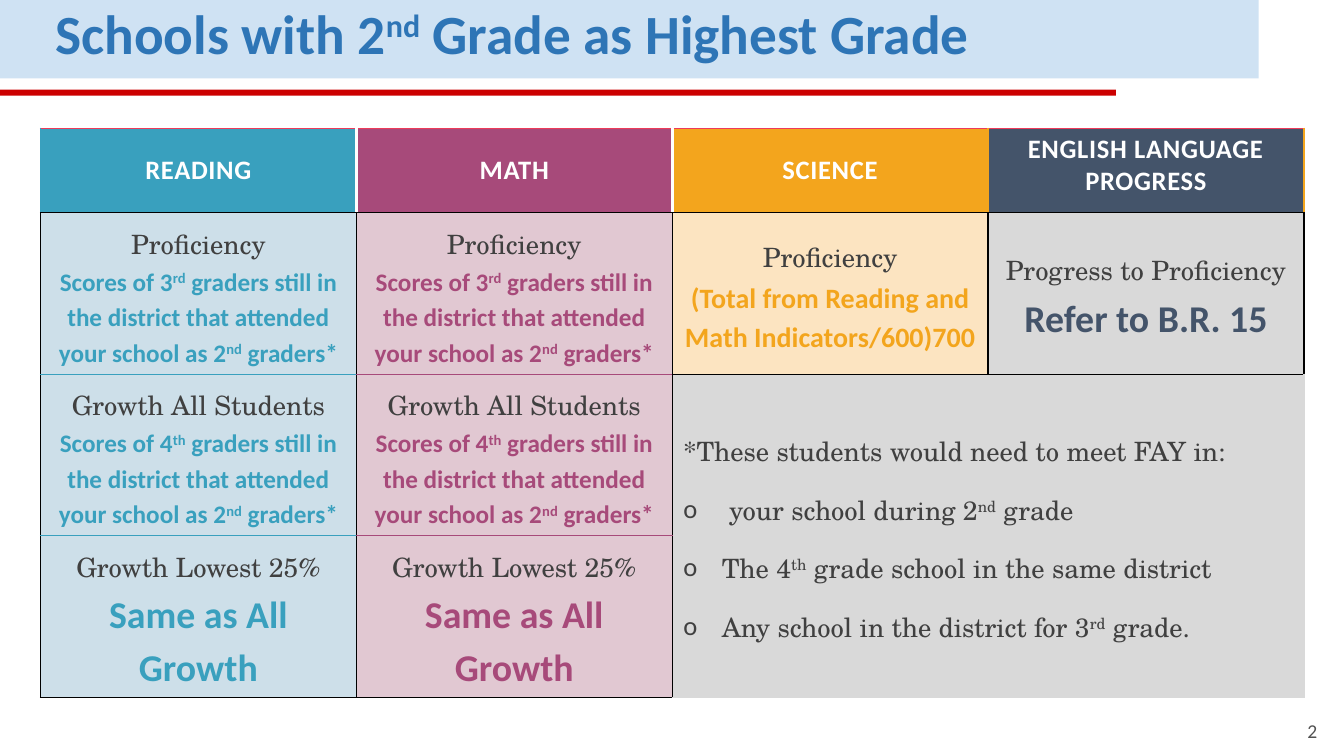
from dataclasses import dataclass

import pptx
import pptx.dml.color
import pptx.enum.shapes
import pptx.enum.text
import pptx.oxml
import pptx.oxml.ns
import pptx.util
from pptx.util import Cm

ANCHOR = pptx.enum.text.MSO_ANCHOR
ALIGN = pptx.enum.text.PP_ALIGN


@dataclass(frozen=True)
class Theme:
    sans: str = "Calibri"
    serif: str = "TeX Gyre Schola"
    title: str = "2E75B6"
    band: str = "CFE2F3"
    rule: str = "CC0000"
    page: str = "525252"
    text: str = "404040"
    white: str = "FFFFFF"
    black: str = "000000"
    header_top: str = "EE3A5A"
    reading: str = "39A0BE"
    math: str = "A74A7A"
    science: str = "F3A51D"
    english: str = "44546A"
    reading_tint: str = "CDDFE9"
    math_tint: str = "E1C8D2"
    science_tint: str = "FCE4C1"
    grey: str = "D9D9D9"
    title_size: float = 39.5
    label_size: float = 19
    scores_size: float = 18
    total_size: float = 20
    large_size: float = 27
    page_size: float = 14


THEME = Theme()


def rgb(value):
    return pptx.dml.color.RGBColor.from_string(value)


def add_text(paragraph, text, size, color, font=THEME.sans, bold=False, spacing=None):
    """Add runs; parts between ^ marks are raised."""
    for index, part in enumerate(text.split("^")):
        run = paragraph.add_run()
        run.text = part
        run.font.size = pptx.util.Pt(size)
        run.font.name = font
        run.font.bold = bold
        run.font.color.rgb = rgb(color)
        properties = run._r.get_or_add_rPr()
        if index % 2:
            properties.set("baseline", "30000")
        if spacing:
            properties.set("spc", str(spacing))


def add_label(paragraph, text):
    add_text(paragraph, text, THEME.label_size, THEME.text, THEME.serif)


def add_band(slide, top, width, height, color):
    band = slide.shapes.add_shape(
        pptx.enum.shapes.MSO_SHAPE.RECTANGLE, 0, top, width, height)
    band.shadow.inherit = False
    band.fill.solid()
    band.fill.fore_color.rgb = rgb(color)
    band.line.fill.background()
    slide.shapes._spTree.insert(2, band._element)  # behind the title


def add_title(slide, text):
    title = slide.shapes.title
    title.left, title.top, title.width, title.height = (
        Cm(1.14), Cm(0.13), Cm(30.58), Cm(1.68))
    frame = title.text_frame
    frame.auto_size = pptx.enum.text.MSO_AUTO_SIZE.NONE
    frame.vertical_anchor = ANCHOR.MIDDLE
    paragraph = frame.paragraphs[0]
    paragraph.alignment = ALIGN.LEFT
    paragraph.line_spacing = 0.8
    add_text(paragraph, text, THEME.title_size, THEME.title, bold=True)


def add_page_number(slide, text):
    frame = slide.shapes.add_textbox(Cm(31.42), Cm(18.11), Cm(2.03), Cm(0.86)).text_frame
    frame.word_wrap = True
    frame.vertical_anchor = ANCHOR.BOTTOM
    frame.margin_left = frame.margin_right = Cm(0.25)
    frame.margin_top = frame.margin_bottom = Cm(0.25)
    frame.paragraphs[0].alignment = ALIGN.RIGHT
    add_text(frame.paragraphs[0], text, THEME.page_size, THEME.page)


def format_cell(cell, fill, left=THEME.black, right=THEME.black, top=THEME.black,
                bottom=THEME.black):
    cell.fill.solid()
    cell.fill.fore_color.rgb = rgb(fill)
    cell.vertical_anchor = ANCHOR.MIDDLE
    cell.margin_left = cell.margin_right = Cm(0.28)
    cell.margin_top = cell.margin_bottom = Cm(0.13)
    borders = {"L": left, "R": right, "T": top, "B": bottom}
    for index, (side, color) in enumerate(borders.items()):
        width = pptx.util.Pt(2.25 if color == THEME.white else 1)
        cell._tc.get_or_add_tcPr().insert(index, pptx.oxml.parse_xml(
            f'<a:ln{side} {pptx.oxml.ns.nsdecls("a")} w="{width}"><a:solidFill>'
            f'<a:srgbClr val="{color}"/></a:solidFill></a:ln{side}>'))


def cell_paragraph(cell, first=True, align=ALIGN.CENTER, after=10):
    frame = cell.text_frame
    paragraph = frame.paragraphs[0] if first else frame.add_paragraph()
    paragraph.alignment = align
    paragraph.line_spacing = 1.15
    paragraph.space_after = pptx.util.Pt(after)
    return paragraph


def add_indicator(cell, label, detail, size, color):
    paragraph = cell_paragraph(cell)
    add_label(paragraph, label)
    paragraph.add_line_break()
    add_text(paragraph, detail, size, color, bold=True)


def add_bullet(paragraph):
    properties = paragraph._p.get_or_add_pPr()
    properties.set("marL", str(Cm(0.97)))
    properties.set("indent", str(-Cm(0.97)))
    for element in (f'buFont {{}} typeface="{THEME.sans}"', 'buChar {} char="o"'):
        properties.append(pptx.oxml.parse_xml(
            f'<a:{element.format(pptx.oxml.ns.nsdecls("a"))}/>'))


def fill_headers(table):
    t = THEME
    headers = [
        ("READING", t.reading, t.reading, t.white),
        ("MATH", t.math, t.white, t.white),
        ("SCIENCE", t.science, t.white, t.science),
        ("ENGLISH LANGUAGE PROGRESS", t.english, t.science, t.science),
    ]
    for column, (text, fill, left, right) in enumerate(headers):
        cell = table.cell(0, column)
        format_cell(cell, fill, left, right, top=t.header_top)
        paragraph = cell.text_frame.paragraphs[0]
        paragraph.alignment = ALIGN.CENTER
        add_text(paragraph, text, t.label_size, t.white, bold=True, spacing=50)
    table.cell(0, 3).vertical_anchor = ANCHOR.TOP


def fill_subjects(table):
    scores = "Scores of {} graders still in the district that attended your school as 2^nd^ graders*"
    indicators = [
        ("Proficiency", scores.format("3^rd^"), THEME.scores_size),
        ("Growth All Students", scores.format("4^th^"), THEME.scores_size),
        ("Growth Lowest 25%", "Same as All Growth", THEME.large_size),
    ]
    subjects = [(THEME.reading, THEME.reading_tint), (THEME.math, THEME.math_tint)]
    for column, (accent, tint) in enumerate(subjects):
        for row, (label, detail, size) in enumerate(indicators, start=1):
            cell = table.cell(row, column)
            format_cell(cell, tint,
                        top=THEME.black if row == 1 else accent,
                        bottom=THEME.black if row == len(indicators) else accent)
            add_indicator(cell, label, detail, size, accent)


def fill_science_and_english(table):
    science, english = table.cell(1, 2), table.cell(1, 3)
    format_cell(science, THEME.science_tint)
    add_indicator(science, "Proficiency", "(Total from Reading and Math Indicators/600)700",
                  THEME.total_size, THEME.science)
    format_cell(english, THEME.grey)
    add_label(cell_paragraph(english, after=0), "Progress to Proficiency")
    add_text(cell_paragraph(english, first=False, after=0), "Refer to B.R. 15",
             THEME.large_size, THEME.english, bold=True)


def fill_note(table):
    note = table.cell(2, 2)
    note.merge(table.cell(3, 3))
    format_cell(note, THEME.grey, right=THEME.grey, bottom=THEME.grey)
    add_label(cell_paragraph(note, align=ALIGN.LEFT),
              "*These students would need to meet FAY in:")
    for text in (" your school during 2^nd^ grade",
                 "The 4^th^ grade school in the same district",
                 "Any school in the district for 3^rd^ grade."):
        paragraph = cell_paragraph(note, first=False, align=ALIGN.LEFT)
        add_bullet(paragraph)
        add_label(paragraph, text)


def add_indicator_table(slide):
    table = slide.shapes.add_table(
        4, 4, Cm(1.02), Cm(3.23), Cm(31.84), Cm(14.34)).table
    for column in table.columns:
        column.width = Cm(7.96)
    for index, row in enumerate(table.rows):
        row.height = Cm(4.07 if index else 2.13)
    fill_headers(table)
    fill_subjects(table)
    fill_science_and_english(table)
    fill_note(table)


def main():
    deck = pptx.Presentation()
    deck.slide_width, deck.slide_height = Cm(33.87), Cm(19.05)
    slide = deck.slides.add_slide(deck.slide_layouts[5])
    # Heading
    add_band(slide, Cm(0), Cm(31.72), Cm(1.98), THEME.band)
    add_band(slide, Cm(2.26), Cm(28.12), Cm(0.15), THEME.rule)
    add_title(slide, "Schools with 2^nd^ Grade as Highest Grade")
    # Indicators and page number
    add_indicator_table(slide)
    add_page_number(slide, "2")
    deck.save("out.pptx")


if __name__ == "__main__":
    main()
